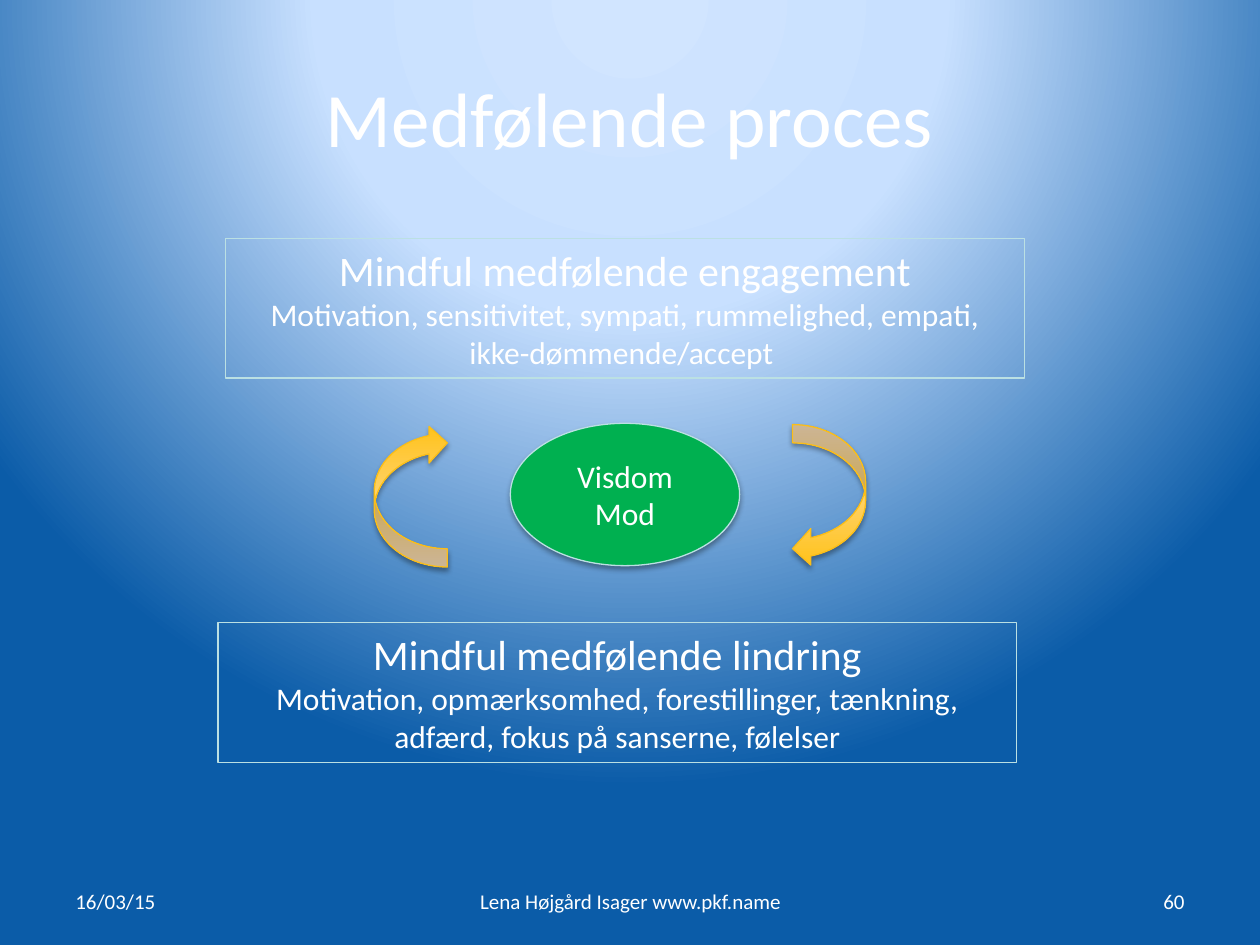
from pptx import Presentation
from pptx import util as u
from pptx.dml.color import RGBColor
from pptx.enum import shapes, text
from pptx.oxml import parse_xml
from pptx.oxml.ns import nsdecls, qn

COLUMN = u.Inches(10) // 100
ROW = u.Inches(7.5) // 75
FONT = "Calibri"
WHITE = RGBColor(0xFF, 0xFF, 0xFF)
PALE_TEAL = RGBColor(0xBB, 0xE0, 0xE3)
GREEN = RGBColor(0x00, 0xB0, 0x50)
AMBER = RGBColor(0xFB, 0xBE, 0x18)
GOLD = RGBColor(0xFF, 0xC2, 0x1A)
CREAM = RGBColor(0xFF, 0xE3, 0xBB)
BACKDROP = ((0, RGBColor(0xD1, 0xE5, 0xFF)), (40, RGBColor(0xC8, 0xE0, 0xFF)),
            (100, RGBColor(0x0B, 0x5C, 0xA8)))
LEFT, CENTER, RIGHT = text.PP_ALIGN.LEFT, text.PP_ALIGN.CENTER, text.PP_ALIGN.RIGHT
TOP, MIDDLE = text.MSO_ANCHOR.TOP, text.MSO_ANCHOR.MIDDLE


def grid(column, row, columns, rows):
    """Turn grid units into left, top, width and height."""
    return [u.Emu(round(length)) for length in
            (column * COLUMN, row * ROW, columns * COLUMN, rows * ROW)]


def paint_background(slide):
    """Fill the slide with a glow centred above its top edge."""
    stops = "".join(f'<a:gs pos="{share * 1000}"><a:srgbClr val="{color}"/></a:gs>'
                    for share, color in BACKDROP)
    slide.element.cSld.insert(0, parse_xml(
        f'<p:bg {nsdecls("p", "a")}><p:bgPr><a:gradFill rotWithShape="1">'
        f'<a:gsLst>{stops}</a:gsLst><a:path path="circle">'
        '<a:fillToRect l="50000" t="-80000" r="50000" b="180000"/></a:path>'
        '</a:gradFill><a:effectLst/></p:bgPr></p:bg>'))


def write(shape, lines, align=CENTER, anchor=MIDDLE):
    """Write (wording, size) lines into a shape."""
    frame = shape.text_frame
    frame.word_wrap = True
    frame.vertical_anchor = anchor
    for index, (wording, size) in enumerate(lines):
        paragraph = frame.add_paragraph() if index else frame.paragraphs[0]
        paragraph.alignment = align
        run = paragraph.add_run()
        run.text = wording
        run.font.name = FONT
        run.font.size = u.Pt(size)
        run.font.color.rgb = WHITE


def add_label(slide, cell, wording, size, align=CENTER):
    """Add a one-line text box."""
    write(slide.shapes.add_textbox(*grid(*cell)), [(wording, size)], align)


def add_outlined(slide, kind, cell, line_color):
    """Add a preset shape with a thin outline and no shadow."""
    shape = slide.shapes.add_shape(kind, *grid(*cell))
    shape.shadow.inherit = False
    shape.line.color.rgb = line_color
    shape.line.width = u.Pt(0.75)
    return shape


def add_shadow(shape):
    """Give a shape a soft shadow falling straight down."""
    shape.element.spPr.find(qn("a:effectLst")).append(parse_xml(
        f'<a:outerShdw {nsdecls("a")} blurRad="{u.Pt(3.1)}" dist="{u.Pt(1.8)}" '
        'dir="5400000" rotWithShape="0"><a:srgbClr val="000000">'
        '<a:alpha val="35000"/></a:srgbClr></a:outerShdw>'))


def add_stage(slide, column, row, heading, details):
    """Add a framed stage of the process."""
    frame = add_outlined(slide, shapes.MSO_SHAPE.RECTANGLE,
                         (column, row, 63.4, 11.1), PALE_TEAL)
    frame.fill.background()
    write(frame, [(heading, 24), (details, 18)], anchor=TOP)
    frame.text_frame.auto_size = text.MSO_AUTO_SIZE.SHAPE_TO_FIT_TEXT


def add_core(slide):
    """Add the green ellipse in the middle of the cycle."""
    core = add_outlined(slide, shapes.MSO_SHAPE.OVAL, (40.5, 33.6, 18.2, 11.3), PALE_TEAL)
    core.fill.solid()
    core.fill.fore_color.rgb = GREEN
    add_shadow(core)
    write(core, [("Visdom", 18), ("Mod", 18)])


def add_cycle_arrow(slide, column, rotation):
    """Add a curved golden arrow beside the ellipse."""
    arrow = add_outlined(slide, shapes.MSO_SHAPE.CURVED_LEFT_ARROW,
                         (column, 33.7, 5.8, 11.3), AMBER)
    arrow.rotation = rotation
    arrow.fill.gradient()
    arrow.fill.gradient_angle = 90
    for stop, color in zip(arrow.fill.gradient_stops, (GOLD, CREAM)):
        stop.color.rgb = color
    add_shadow(arrow)


def main():
    """Build and save the slide."""
    presentation = Presentation()
    presentation.slide_width, presentation.slide_height = 100 * COLUMN, 75 * ROW
    slide = presentation.slides.add_slide(presentation.slide_layouts[6])
    paint_background(slide)
    add_label(slide, (5, 3, 90, 12.5), "Medfølende proces", 44)
    add_label(slide, (5, 69.5, 23.3, 4), "16/03/15", 12, LEFT)
    add_label(slide, (34.2, 69.5, 31.7, 4), "Lena Højgård Isager www.pkf.name", 12)
    add_label(slide, (71.7, 69.5, 23.3, 4), "60", 12, RIGHT)
    add_stage(slide, 17.9, 18.9, "Mindful medfølende engagement",
              "Motivation, sensitivitet, sympati, rummelighed, empati, ikke-dømmende/accept ")
    add_stage(slide, 17.3, 49.4, "Mindful medfølende lindring",
              "Motivation, opmærksomhed, forestillinger, tænkning, "
              "adfærd, fokus på sanserne, følelser")
    add_core(slide)
    add_cycle_arrow(slide, 62.9, 0)
    add_cycle_arrow(slide, 29.7, 180)
    presentation.save("out.pptx")


if __name__ == "__main__":
    main()
